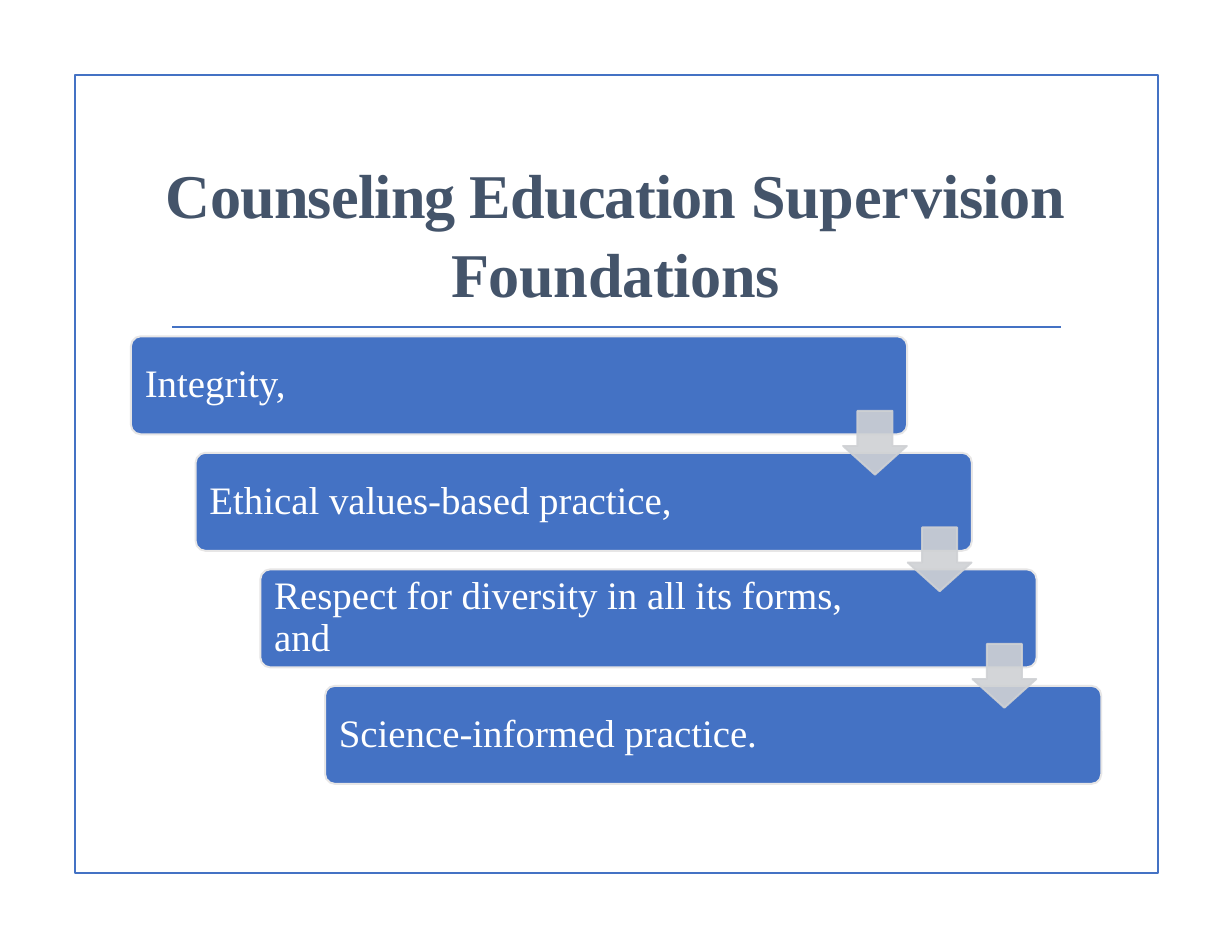
from pptx import Presentation
from pptx.dml.color import RGBColor
from pptx.enum.shapes import MSO_CONNECTOR, MSO_SHAPE
from pptx.enum.text import MSO_ANCHOR, PP_ALIGN
from pptx.oxml.ns import qn
from pptx.util import Pt
from lxml import etree

FRAME = MSO_SHAPE.RECTANGLE
CARD = MSO_SHAPE.ROUNDED_RECTANGLE
ARROW = MSO_SHAPE.DOWN_ARROW
STRAIGHT = MSO_CONNECTOR.STRAIGHT
MIDDLE = MSO_ANCHOR.MIDDLE
CENTER = PP_ALIGN.CENTER
LEFT = PP_ALIGN.LEFT

STEPS = [
    "Integrity,",
    "Ethical values-based practice,",
    "Respect for diversity in all its forms, and",
    "Science-informed practice.",
]
TITLE_LINES = [
    [("Counseling Education ", -0.5), ("Sup", -0.2), ("e", 0), ("r", 1.2), ("vision", -0.2)],
    [("Foundations", -0.2)],
]
STEP_RIGHT, STEP_DOWN = 41.6, 74.9


def color(value):
    """Turn a hex string into a colour."""
    return RGBColor.from_string(value)


class SlideBuilder:
    """Hold the style and the current slide."""

    font = "Times New Roman"
    blue, navy, white = "4472C4", "44546A", "FFFFFF"
    card_edge, gray = "E7E6E6", "CFD1D4"
    line_width = 1.25

    def __init__(self, slide):
        """Keep the slide to draw on."""
        self.slide = slide

    def run(self, paragraph, text, size, fill, bold=False, spacing=0):
        """Add one styled run to a paragraph."""
        run = paragraph.add_run()
        run.text = text
        run.font.name = self.font
        run.font.size = Pt(size)
        run.font.bold = bold
        run.font.color.rgb = color(fill)
        if spacing:
            run.font._element.set("spc", str(round(spacing * 100)))

    def title(self, left, top, width, height, lines):
        """Place and fill the title placeholder."""
        shape = self.slide.shapes.title
        shape.left, shape.top, shape.width, shape.height = map(Pt, (left, top, width, height))
        shape.text_frame.vertical_anchor = MIDDLE
        shape.text_frame.word_wrap = True
        paragraph = shape.text_frame.paragraphs[0]
        paragraph.alignment = CENTER
        paragraph.line_spacing = 1.06
        for index, line in enumerate(lines):
            if index:
                paragraph.add_line_break()
            for text, spacing in line:
                self.run(paragraph, text, 40, self.navy, True, spacing)

    def shape(self, kind, left, top, width, height, line, fill=None, adjustments=(), opacity=None):
        """Add an outlined preset shape."""
        shape = self.slide.shapes.add_shape(kind, *map(Pt, (left, top, width, height)))
        shape.shadow.inherit = False
        for index, value in enumerate(adjustments):
            shape.adjustments[index] = value
        if fill:
            shape.fill.solid()
            shape.fill.fore_color.rgb = color(fill)
        else:
            shape.fill.background()
        shape.line.color.rgb = color(line)
        shape.line.width = Pt(self.line_width)
        if opacity:
            for element in shape._element.spPr.iter(qn("a:srgbClr")):
                etree.SubElement(element, qn("a:alpha")).set("val", str(opacity * 1000))

    def rule(self, left, top, right):
        """Add a horizontal line."""
        connector = self.slide.shapes.add_connector(STRAIGHT, *map(Pt, (left, top, right, top)))
        connector.line.color.rgb = color(self.blue)
        connector.line.width = Pt(self.line_width)
        etree.SubElement(connector._element.spPr, qn("a:effectLst"))

    def text(self, left, top, width, height, text):
        """Add the text of one step."""
        box = self.slide.shapes.add_textbox(*map(Pt, (left, top, width, height)))
        frame = box.text_frame
        frame.word_wrap = True
        frame.vertical_anchor = MIDDLE
        frame.margin_left = frame.margin_right = Pt(7.2)
        frame.margin_top = frame.margin_bottom = Pt(7.2)
        paragraph = frame.paragraphs[0]
        paragraph.alignment = LEFT
        paragraph.line_spacing = 0.9
        self.run(paragraph, text, 25, self.white)


def main():
    """Build and save the slide."""
    presentation = Presentation()
    presentation.slide_width, presentation.slide_height = Pt(792), Pt(612)
    slide = presentation.slides.add_slide(presentation.slide_layouts[5])
    builder = SlideBuilder(slide)
    builder.shape(FRAME, 48, 48, 696.5, 513.5, builder.blue)
    builder.rule(110.6, 210, 682)
    builder.title(84, 90, 623.5, 116.6, TITLE_LINES)
    for index, step in enumerate(STEPS):
        right, down = index * STEP_RIGHT, index * STEP_DOWN
        builder.shape(CARD, 84.2 + right, 216.2 + down, 499, 63, builder.card_edge, builder.blue, [0.1])
        text_width = 412.6 if index else 425.5
        builder.text(86 + right, 218 + down, text_width, 59.4, step)
    for index in range(len(STEPS) - 1):
        builder.shape(ARROW, 542 + index * STEP_RIGHT, 264.2 + index * STEP_DOWN, 41, 41,
                      builder.gray, builder.gray, [0.55, 0.45], 90)
    presentation.save("out.pptx")


if __name__ == "__main__":
    main()
